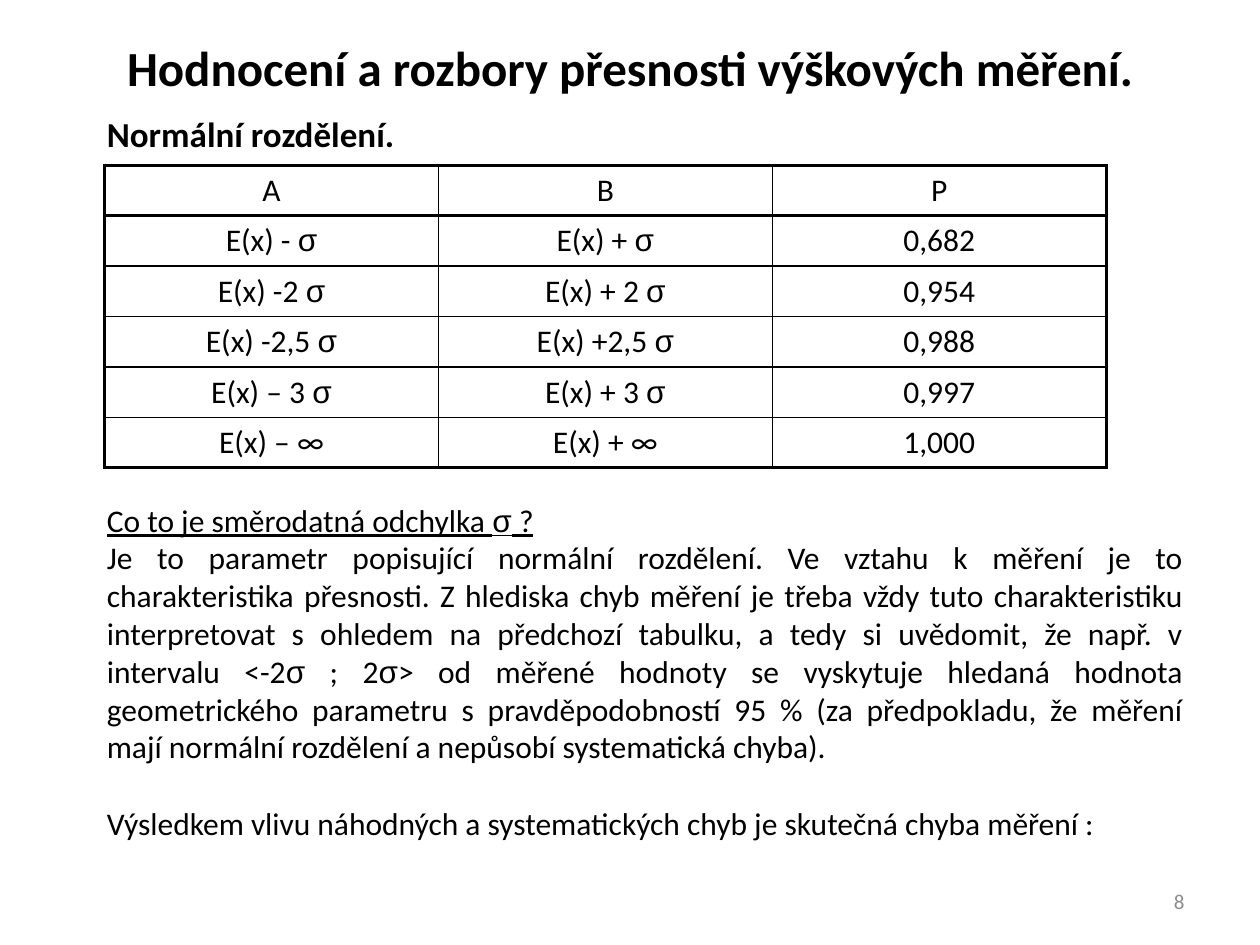
from itertools import groupby

from lxml.etree import SubElement
from pptx import Presentation
from pptx.dml.color import RGBColor as Color
from pptx.enum.text import MSO_ANCHOR as Anchor, PP_ALIGN as Align
from pptx.oxml.ns import qn
from pptx.util import Inches, Pt

TITLE = "Hodnocení a rozbory přesnosti výškových měření."
HEAD = "Normální rozdělení."
ASK = "Co to je směrodatná odchylka σ ?"
BODY = (
    "Je to parametr popisující normální rozdělení. Ve vztahu k měření je to "
    "charakteristika přesnosti. Z hlediska chyb měření je třeba vždy tuto "
    "charakteristiku interpretovat s ohledem na předchozí tabulku, a tedy si "
    "uvědomit, že např. v intervalu <-2σ ; 2σ> od měřené hodnoty se vyskytuje "
    "hledaná hodnota geometrického parametru s pravděpodobností 95 % (za "
    "předpokladu, že měření mají normální rozdělení a nepůsobí systematická chyba)."
)
END = "Výsledkem vlivu náhodných a systematických chyb je skutečná chyba měření :"
PAGE = "8"
ROWS = [
    ("A", "B", "P"),
    ("E(x) - σ", "E(x) + σ", "0,682"),
    ("E(x) -2 σ", "E(x) + 2 σ", "0,954"),
    ("E(x) -2,5 σ", "E(x) +2,5 σ", "0,988"),
    ("E(x) – 3 σ", "E(x) + 3 σ", "0,997"),
    ("E(x) – ∞", "E(x) + ∞", "1,000"),
]

THEME = {
    "font": "Calibri", "greek": "Arial",
    "ink": "000000", "grey": "8C8C8C",
    "title": 28, "head": 20, "text": 18, "page": 12,
    "thin": 1, "thick": 2,
}
LINE = 22  # height of one text line in points
COL, ROW = 2.65, 0.4


def write(par, text, size="text", ink="ink", align=Align.LEFT, gap=0, **style):
    """Fill a paragraph, setting each sigma in the Greek font."""
    par.alignment, par.space_before = align, Pt(gap)
    for greek, chars in groupby(text, lambda c: c == "σ"):
        run = par.add_run()
        run.text = "".join(chars)
        form = {"name": THEME["greek" if greek else "font"],
                "size": Pt(THEME[size]), **style}
        for key, val in form.items():
            setattr(run.font, key, val)
        run.font.color.rgb = Color.from_string(THEME[ink])


def add_text(slide, box, parts, anchor=Anchor.TOP):
    frame = slide.shapes.add_textbox(*map(Inches, box)).text_frame
    frame.word_wrap, frame.vertical_anchor = True, anchor
    for i, (text, form) in enumerate(parts):
        par = frame.add_paragraph() if i else frame.paragraphs[0]
        write(par, text, **form)


def rule(cell, side, width):
    """Draw one cell border; side is L, R, T or B."""
    line = SubElement(cell._tc.get_or_add_tcPr(), qn(f"a:ln{side}"),
                      w=str(Pt(width)))
    fill = SubElement(line, qn("a:solidFill"))
    SubElement(fill, qn("a:srgbClr"), val=THEME["ink"])


def add_grid(slide):
    rows, cols = len(ROWS), len(ROWS[0])
    size = (0.83, 1.31, cols * COL, rows * ROW)
    grid = slide.shapes.add_table(rows, cols, *map(Inches, size)).table
    for r, row in enumerate(ROWS):
        grid.rows[r].height = Inches(ROW)
        for c, text in enumerate(row):
            cell = grid.cell(r, c)
            mid = r == 0 or c == cols - 1
            cell.vertical_anchor = Anchor.MIDDLE if mid else Anchor.TOP
            write(cell.text_frame.paragraphs[0], text, align=Align.CENTER)
            thick = {"L": c == 0, "R": c == cols - 1,
                     "T": r < 2, "B": r in (0, rows - 1)}
            for side, bold in thick.items():
                rule(cell, side, THEME["thick" if bold else "thin"])
            cell.fill.background()


def main():
    deck = Presentation()
    deck.slide_width, deck.slide_height = Inches(10), Inches(7.5)
    slide = deck.slides.add_slide(deck.slide_layouts[6])
    add_text(slide, (7.17, 6.95, 2.33, 0.4),
             [(PAGE, {"size": "page", "ink": "grey", "align": Align.RIGHT})],
             Anchor.MIDDLE)
    add_text(slide, (0.75, 0.25, 8.5, 0.57),
             [(TITLE, {"size": "title", "align": Align.CENTER, "bold": True})])
    add_text(slide, (0.75, 0.84, 8.74, 5.89), [
        (HEAD, {"size": "head", "bold": True}),
        (ASK, {"gap": 9 * LINE, "underline": True}),
        (BODY, {"align": Align.JUSTIFY}),
        (END, {"gap": LINE}),
    ])
    add_grid(slide)
    deck.save("out.pptx")


if __name__ == "__main__":
    main()
